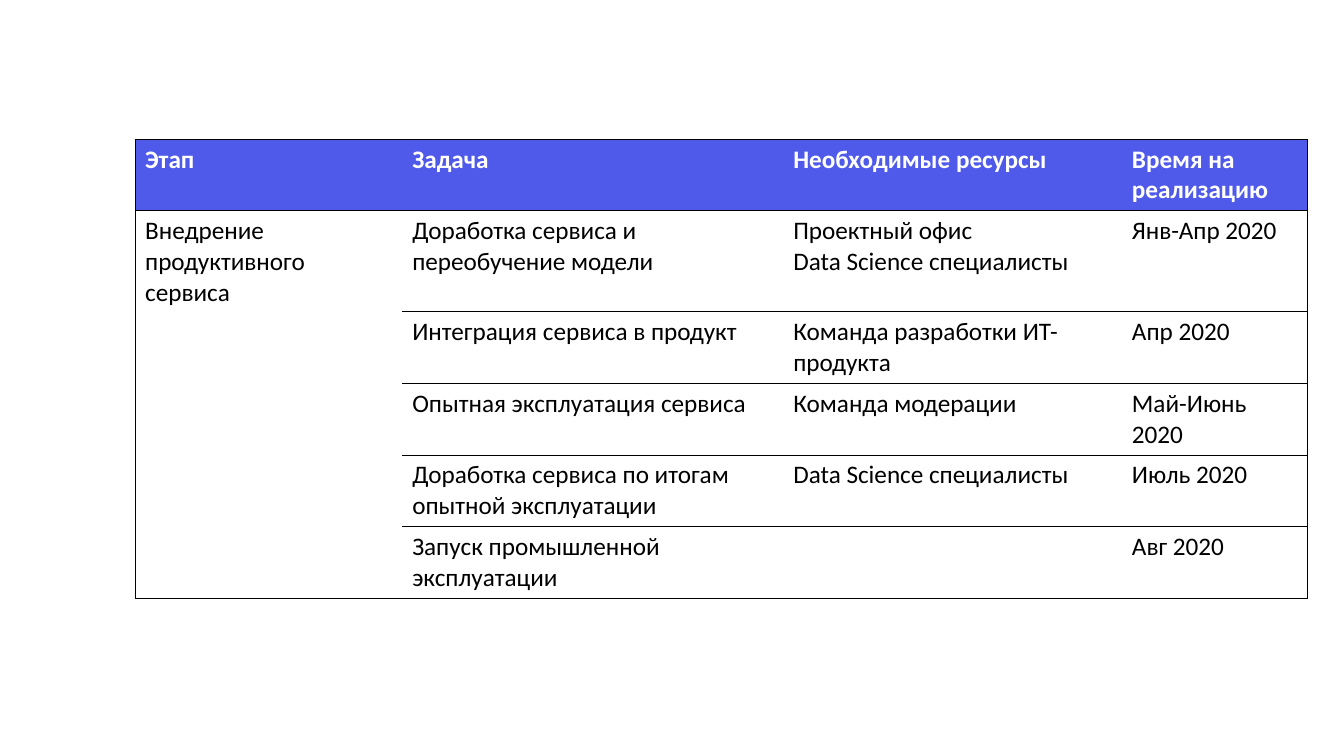
from dataclasses import dataclass

from lxml import etree
from pptx import Presentation
from pptx.dml.color import RGBColor
from pptx.oxml.ns import qn
from pptx.table import _Cell
from pptx.util import Pt

BLACK = RGBColor(0, 0, 0)
WHITE = RGBColor(255, 255, 255)
HEADER_BLUE = RGBColor(0x4F, 0x5A, 0xEA)
FONT = "Calibri"
FONT_SIZE = Pt(18)
BORDER = Pt(0.5)
LEFT, TOP = 96.5, 99.4
COL_WIDTHS = (190.8, 272.2, 241.9, 132.5)
HEADER_HEIGHT = 50.5
HEADERS = ("Этап", "Задача", "Необходимые ресурсы", "Время на реализацию")
STAGE = "Внедрение продуктивного сервиса"


@dataclass(frozen=True)
class Task:
    name: str
    resources: tuple[str, ...]
    period: str
    height: float = 50.5


TASKS = (
    Task("Доработка сервиса и переобучение модели",
         ("Проектный офис", "Data Science специалисты"), "Янв-Апр 2020", 72),
    Task("Интеграция сервиса в продукт",
         ("Команда разработки ИТ-продукта",), "Апр 2020"),
    Task("Опытная эксплуатация сервиса",
         ("Команда модерации",), "Май-Июнь 2020"),
    Task("Доработка сервиса по итогам опытной эксплуатации",
         ("Data Science специалисты",), "Июль 2020"),
    Task("Запуск промышленной эксплуатации", (), "Авг 2020"),
)


def write_cell(cell: _Cell, lines: tuple[str, ...], color: RGBColor,
               bold: bool = False) -> None:
    tf = cell.text_frame
    for i, line in enumerate(lines):
        p = tf.add_paragraph() if i else tf.paragraphs[0]
        r = p.add_run()
        r.text = line
        r.font.name = FONT
        r.font.size = FONT_SIZE
        r.font.bold = bold
        r.font.color.rgb = color


def set_borders(cell: _Cell, sides: str) -> None:
    """Draw the sides named by letters L, R, T, B and clear the others."""
    tc_pr = cell._tc.get_or_add_tcPr()
    for side in "LRTB":
        ln = etree.SubElement(tc_pr, qn(f"a:ln{side}"), w=str(int(BORDER)))
        if side in sides:
            fill = etree.SubElement(ln, qn("a:solidFill"))
            etree.SubElement(fill, qn("a:srgbClr"), val=str(BLACK))
        else:
            etree.SubElement(ln, qn("a:noFill"))


def cell_sides(row: int, col: int) -> str:
    last_row, last_col = len(TASKS), len(HEADERS) - 1
    if col == 0:
        top = "T" if row <= 1 else ""
        bottom = "B" if row in (0, 1, last_row) else ""
        return "L" + top + bottom
    return "TBR" if col == last_col else "TB"


def main() -> None:
    prs = Presentation()
    prs.slide_width, prs.slide_height = Pt(960), Pt(540)
    s = prs.slides.add_slide(prs.slide_layouts[6])

    heights = (HEADER_HEIGHT, *(task.height for task in TASKS))
    table = s.shapes.add_table(
        len(heights), len(COL_WIDTHS), Pt(LEFT), Pt(TOP),
        Pt(sum(COL_WIDTHS)), Pt(sum(heights))).table
    table.first_row = False
    table.horz_banding = False
    for column, width in zip(table.columns, COL_WIDTHS):
        column.width = Pt(width)

    for row, height in enumerate(heights):
        table.rows[row].height = Pt(height)
        for col in range(len(COL_WIDTHS)):
            cell = table.cell(row, col)
            set_borders(cell, cell_sides(row, col))
            if row == 0:
                cell.fill.solid()
                cell.fill.fore_color.rgb = HEADER_BLUE
            else:
                cell.fill.background()

    for col, header in enumerate(HEADERS):
        write_cell(table.cell(0, col), (header,), WHITE, bold=True)
    stage_cell = table.cell(1, 0)
    stage_cell.merge(table.cell(len(TASKS), 0))
    write_cell(stage_cell, (STAGE,), BLACK)
    for row, task in enumerate(TASKS, start=1):
        columns = ((task.name,), task.resources, (task.period,))
        for col, lines in enumerate(columns, start=1):
            write_cell(table.cell(row, col), lines, BLACK)

    prs.save("out.pptx")


if __name__ == "__main__":
    main()
